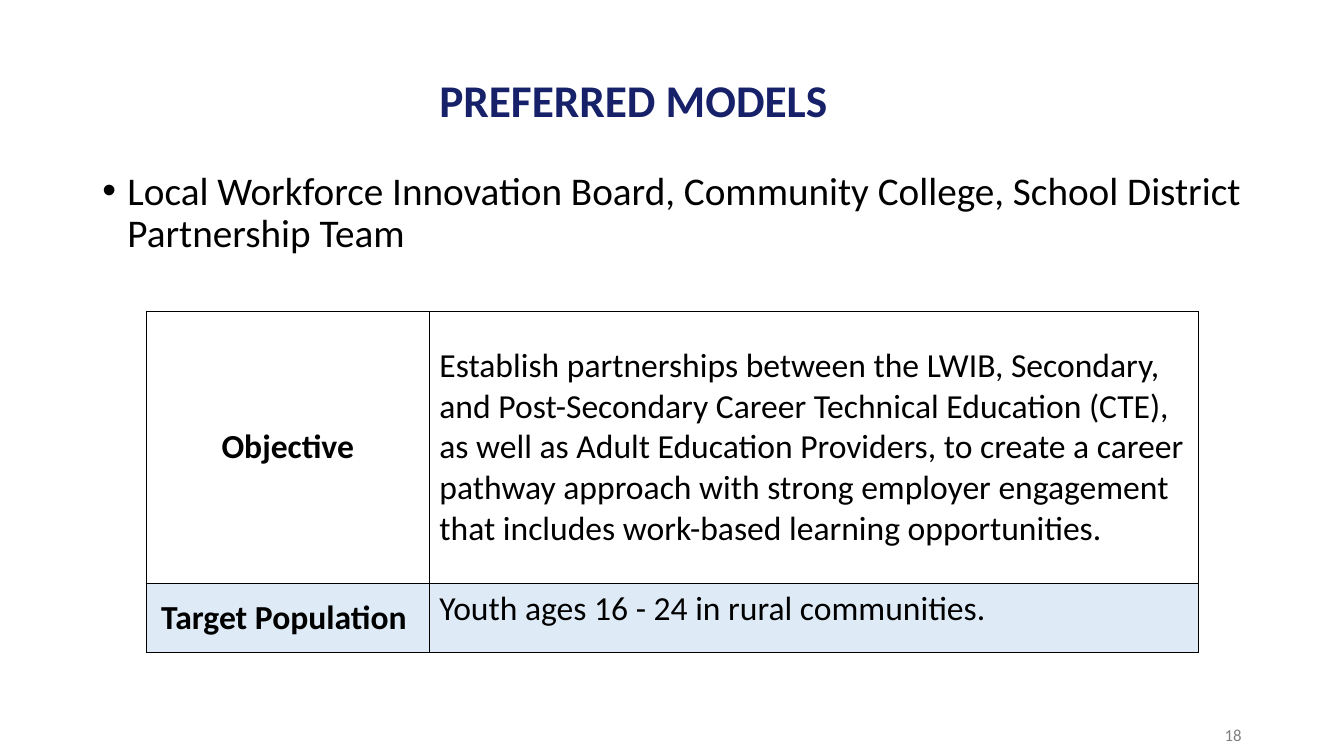
from lxml import etree
from pptx import Presentation
from pptx.dml.color import RGBColor
from pptx.enum.text import MSO_ANCHOR, PP_ALIGN
from pptx.oxml.ns import qn
from pptx.util import Pt

LEFT, CENTER, RIGHT = PP_ALIGN.LEFT, PP_ALIGN.CENTER, PP_ALIGN.RIGHT
TOP, MIDDLE = MSO_ANCHOR.TOP, MSO_ANCHOR.MIDDLE

FONT = "Calibri"
COLORS = {
    "title": "172169",
    "text": "000000",
    "page": "808080",
    "border": "000000",
    "white": "FFFFFF",
    "band": "DEEBF7",
}
COLUMN_WIDTHS = (202.3, 549.4)
ROW_HEIGHTS = (194.4, 49)
ROWS = (
    ("Objective",
     "Establish partnerships between the LWIB, Secondary, and Post-Secondary "
     "Career Technical Education (CTE), as well as Adult Education Providers, "
     "to create a career pathway approach with strong employer engagement that "
     "includes work-based learning opportunities.",
     "white", MIDDLE, 7.2),
    ("Target Population", "Youth ages 16 - 24 in rural communities.",
     "band", TOP, 12.6),
)


def style_paragraph(paragraph, size, color, bold=False, align=LEFT):
    paragraph.alignment = align
    for run in paragraph.runs:
        run.font.name = FONT
        run.font.size = Pt(size)
        run.font.bold = bold
        run.font.color.rgb = RGBColor.from_string(COLORS[color])


def add_text(slide, box, text, anchor=TOP):
    """Add a wrapping text box and return its only paragraph."""
    text_frame = slide.shapes.add_textbox(*map(Pt, box)).text_frame
    text_frame.word_wrap = True
    text_frame.vertical_anchor = anchor
    text_frame.text = text
    return text_frame.paragraphs[0]


def add_title(slide, box):
    paragraph = add_text(slide, box, "PREFERRED MODELS", MIDDLE)
    paragraph._p.get_or_add_pPr().set("marL", str(Pt(36)))
    paragraph.line_spacing = 0.9
    style_paragraph(paragraph, 32.4, "title", bold=True)


def add_body(slide, box):
    paragraph = add_text(
        slide, box,
        "Local Workforce Innovation Board, Community College, "
        "School District Partnership Team")
    properties = paragraph._p.get_or_add_pPr()
    properties.set("marL", str(Pt(18)))
    properties.set("indent", str(-Pt(18)))
    etree.SubElement(properties, qn("a:buFont"), typeface="Arial")
    etree.SubElement(properties, qn("a:buChar"), char="•")
    paragraph.line_spacing = 0.9
    style_paragraph(paragraph, 28, "text")


def add_page_number(slide, box):
    paragraph = add_text(slide, box, "18", MIDDLE)
    style_paragraph(paragraph, 12, "page", align=RIGHT)


def set_borders(cell):
    properties = cell._tc.get_or_add_tcPr()
    for index, side in enumerate(("lnL", "lnR", "lnT", "lnB")):
        line = etree.Element(qn(f"a:{side}"), w=str(Pt(1)))
        fill = etree.SubElement(line, qn("a:solidFill"))
        etree.SubElement(fill, qn("a:srgbClr"), val=COLORS["border"])
        properties.insert(index, line)


def fill_cell(cell, text, fill, anchor, bold, align):
    cell.text = text
    cell.vertical_anchor = anchor
    cell.fill.solid()
    cell.fill.fore_color.rgb = RGBColor.from_string(COLORS[fill])
    set_borders(cell)
    style_paragraph(cell.text_frame.paragraphs[0], 24, "text", bold, align)


def add_model_table(slide, left, top):
    table = slide.shapes.add_table(
        len(ROW_HEIGHTS), len(COLUMN_WIDTHS), Pt(left), Pt(top),
        Pt(sum(COLUMN_WIDTHS)), Pt(sum(ROW_HEIGHTS))).table
    for column, width in zip(table.columns, COLUMN_WIDTHS):
        column.width = Pt(width)
    for row, height, content in zip(table.rows, ROW_HEIGHTS, ROWS):
        label, detail, fill, anchor, label_margin = content
        row.height = Pt(height)
        label_cell, detail_cell = row.cells
        fill_cell(label_cell, label, fill, MIDDLE, True, CENTER)
        label_cell.margin_right = Pt(label_margin)
        fill_cell(detail_cell, detail, fill, anchor, False, LEFT)


def main():
    presentation = Presentation()
    presentation.slide_width = Pt(960)
    presentation.slide_height = Pt(540)
    slide = presentation.slides.add_slide(presentation.slide_layouts[6])
    add_title(slide, (270.7, 51.4, 599.8, 43.9))
    add_body(slide, (66, 118.8, 828, 368))
    add_page_number(slide, (678, 510.5, 216, 28.8))
    add_model_table(slide, 104.4, 222.5)
    presentation.save("out.pptx")


if __name__ == "__main__":
    main()
